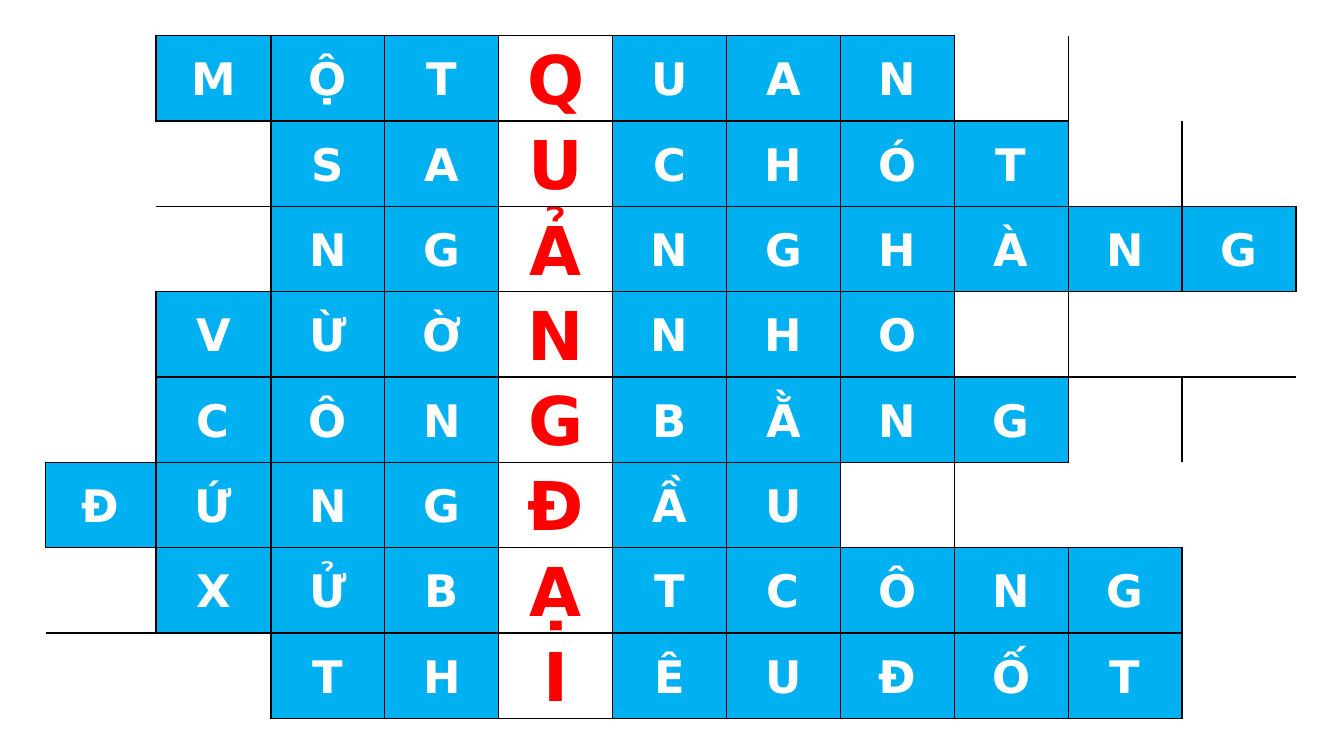
"""Build a crossword slide whose key column is picked out in red."""
from typing import NamedTuple

from lxml import etree
from pptx import Presentation, util as u
from pptx.dml.color import RGBColor
from pptx.enum import text
from pptx.oxml import ns

BLUE = RGBColor(0x00, 0xB0, 0xF0)
WHITE = RGBColor(0xFF, 0xFF, 0xFF)
RED = RGBColor(0xFF, 0x00, 0x00)
BLACK = RGBColor(0x00, 0x00, 0x00)
FONT = "DejaVu Sans"
PLAIN = "{2D5ABB26-0587-4C30-8999-92F81FD0307C}"
WIDTHS = [2.78, 2.9] + [2.87] * 9
HEIGHT = 2.15
KEY = 4
SIDES = {"L": (0, -1), "R": (0, 1), "T": (-1, 0), "B": (1, 0)}


class Word(NamedTuple):
    letters: str
    key: int


class Look(NamedTuple):
    fill: RGBColor
    ink: RGBColor
    size: int


WORDS = [
    Word("MỘTQUAN", 3),
    Word("SAUCHÓT", 2),
    Word("NGẢNGHÀNG", 2),
    Word("VỪỜNNHO", 3),
    Word("CÔNGBẰNG", 3),
    Word("ĐỨNGĐẦU", 4),
    Word("XỬBẠTCÔNG", 3),
    Word("THIÊUĐỐT", 2),
]
COMMON = Look(BLUE, WHITE, 32)
MARKED = Look(WHITE, RED, 48)


def place(words: list[Word]) -> dict[tuple[int, int], str]:
    """Map each row and column to its letter, lining up the key letters."""
    return {
        (row, KEY - word.key + step): letter
        for row, word in enumerate(words)
        for step, letter in enumerate(word.letters)
    }


def edge(cell, side: str) -> None:
    """Draw a thin black border on one side of a cell."""
    line = etree.SubElement(cell._tc.get_or_add_tcPr(), ns.qn(f"a:ln{side}"), w=str(u.Pt(1)))
    fill = etree.SubElement(line, ns.qn("a:solidFill"))
    etree.SubElement(fill, ns.qn("a:srgbClr"), val=str(BLACK))


def write(cell, letter: str, look: Look) -> None:
    """Fill a cell and set its letter."""
    cell.fill.solid()
    cell.fill.fore_color.rgb = look.fill
    cell.vertical_anchor = text.MSO_ANCHOR.MIDDLE
    cell.margin_left = cell.margin_right = u.Cm(0.18)
    cell.margin_top = cell.margin_bottom = 0
    cell.text_frame.text = letter
    para = cell.text_frame.paragraphs[0]
    para.alignment = text.PP_ALIGN.CENTER
    para.line_spacing = 1.07
    font = para.runs[0].font
    font.name, font.size, font.bold = FONT, u.Pt(look.size), True
    font.color.rgb = look.ink


def draw(slide, words: list[Word]) -> None:
    """Add the crossword table."""
    frame = slide.shapes.add_table(
        len(words), len(WIDTHS), u.Cm(1.15), u.Cm(0.9),
        u.Cm(sum(WIDTHS)), u.Cm(HEIGHT * len(words)))
    table = frame.table
    table.first_row = table.horz_banding = False
    table._tbl.tblPr.find(ns.qn("a:tableStyleId")).text = PLAIN
    for col, width in zip(table.columns, WIDTHS):
        col.width = u.Cm(width)
    for row in table.rows:
        row.height = u.Cm(HEIGHT)

    grid = place(words)
    for row in range(len(words)):
        for col in range(len(WIDTHS)):
            cell = table.cell(row, col)
            for side, (down, right) in SIDES.items():
                if (row, col) in grid or (row + down, col + right) in grid:
                    edge(cell, side)
            if (row, col) in grid:
                write(cell, grid[row, col], MARKED if col == KEY else COMMON)
            else:
                cell.fill.background()


def main() -> None:
    """Make and save the deck."""
    deck = Presentation()
    deck.slide_width, deck.slide_height = u.Cm(33.87), u.Cm(19.05)
    draw(deck.slides.add_slide(deck.slide_layouts[6]), WORDS)
    deck.save("out.pptx")


if __name__ == "__main__":
    main()
